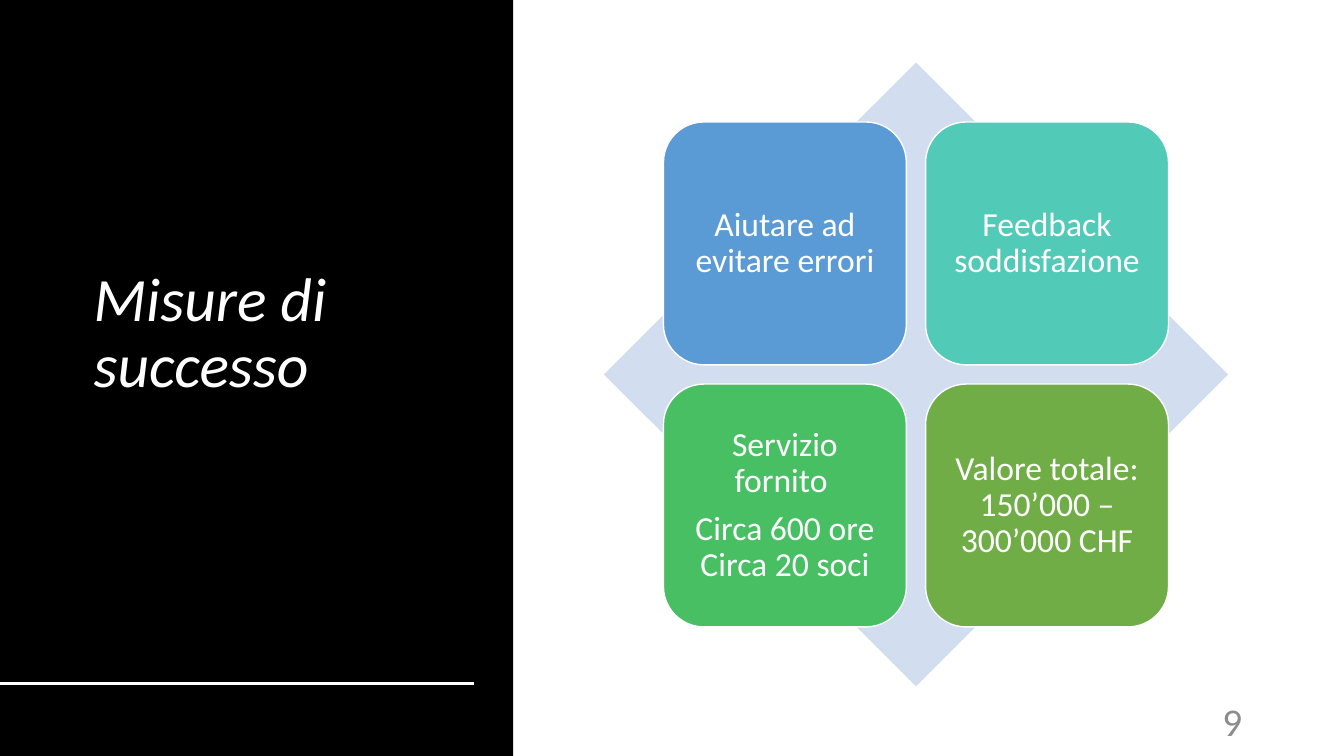
from pptx import Presentation
from pptx.dml.color import RGBColor
from pptx.enum.shapes import MSO_CONNECTOR, MSO_SHAPE
from pptx.enum.text import MSO_ANCHOR, PP_ALIGN
from pptx.util import Inches, Pt
from lxml import etree

RECT, DIAMOND, ROUNDED = MSO_SHAPE.RECTANGLE, MSO_SHAPE.DIAMOND, MSO_SHAPE.ROUNDED_RECTANGLE
STRAIGHT = MSO_CONNECTOR.STRAIGHT
MIDDLE = MSO_ANCHOR.MIDDLE
LEFT, CENTER, RIGHT = PP_ALIGN.LEFT, PP_ALIGN.CENTER, PP_ALIGN.RIGHT

FONT = "Calibri"
WHITE = "FFFFFF"
DRAWING_NS = "http://schemas.openxmlformats.org/drawingml/2006/main"

MEASURES = [
    (["Aiutare ad evitare errori"], "5B9BD5"),
    (["Feedback soddisfazione"], "52CAB8"),
    (["Servizio fornito ", "Circa 600 ore Circa 20 soci"], "49BF64"),
    (["Valore totale: 150’000 – 300’000 CHF"], "70AD47"),
]


def rgb(value):
    return RGBColor.from_string(value)


def add_panel(shapes, kind, x, y, w, h, fill, outline=None):
    sp = shapes.add_shape(kind, Inches(x), Inches(y), Inches(w), Inches(h))
    sp.shadow.inherit = False
    sp.fill.solid()
    sp.fill.fore_color.rgb = rgb(fill)
    if outline:
        sp.line.color.rgb = rgb(outline)
        sp.line.width = Pt(1)
    else:
        sp.line.fill.background()
    return sp


def write_text(tf, lines, font, paragraph):
    """Fill a text frame, one paragraph per line, with the given formats."""
    tf.word_wrap = True
    tf.vertical_anchor = MIDDLE
    for i, line in enumerate(lines):
        p = tf.paragraphs[0] if i == 0 else tf.add_paragraph()
        for name, value in paragraph.items():
            setattr(p, name, value)
        r = p.add_run()
        r.text = line
        r.font.name = FONT
        r.font.color.rgb = rgb(font["color"])
        for name, value in font.items():
            if name != "color":
                setattr(r.font, name, value)


def add_text(shapes, x, y, w, h, text, font, paragraph):
    sp = shapes.add_textbox(Inches(x), Inches(y), Inches(w), Inches(h))
    write_text(sp.text_frame, [text], font, paragraph)


def add_title_panel(shapes, x, y, w, h):
    add_panel(shapes, RECT, x, y, w, h, "000000")
    add_text(shapes, x + 0.83, y + 0.61, w - 1.19, 5.42, "Misure di successo",
             {"size": Pt(44), "italic": True, "color": WHITE},
             {"alignment": LEFT, "line_spacing": 0.9, "space_after": Pt(6)})
    rule_y = Inches(y + 6.78)
    rule = shapes.add_connector(STRAIGHT, Inches(x), rule_y, Inches(x + w - 0.39), rule_y)
    rule.line.color.rgb = rgb(WHITE)
    rule.line.width = Pt(2)
    etree.SubElement(rule._element.spPr, f"{{{DRAWING_NS}}}effectLst")


def add_measure_matrix(shapes, x, y, side):
    """Diamond of the given side with a centred two by two grid of cards."""
    group = shapes.add_group_shape().shapes
    add_panel(group, DIAMOND, x, y, side, side, "D2DEEF")
    card, pitch = 2.41, 2.6
    margin = (side - card - pitch) / 2
    for i, (lines, color) in enumerate(MEASURES):
        row, col = divmod(i, 2)
        sp = add_panel(group, ROUNDED, x + margin + col * pitch,
                       y + margin + row * pitch, card, card, color, WHITE)
        tf = sp.text_frame
        for edge in ("left", "top", "right", "bottom"):
            setattr(tf, f"margin_{edge}", Inches(0.1))
        write_text(tf, lines, {"size": Pt(24), "color": WHITE},
                   {"alignment": CENTER, "line_spacing": 0.9, "space_after": Pt(8.4)})


def add_page_number(shapes, x, y, w, h):
    add_text(shapes, x, y, w, h, "9", {"size": Pt(28), "color": "8C8C8C"},
             {"alignment": RIGHT})


def main():
    prs = Presentation()
    prs.slide_width, prs.slide_height = Inches(13.33), Inches(7.5)
    s = prs.slides.add_slide(prs.slide_layouts[6])
    add_title_panel(s.shapes, 0, 0, 5.09, 7.5)
    add_measure_matrix(s.shapes, 5.99, 0.62, 6.19)
    add_page_number(s.shapes, 9.42, 6.95, 3, 0.4)
    prs.save("out.pptx")


if __name__ == "__main__":
    main()
